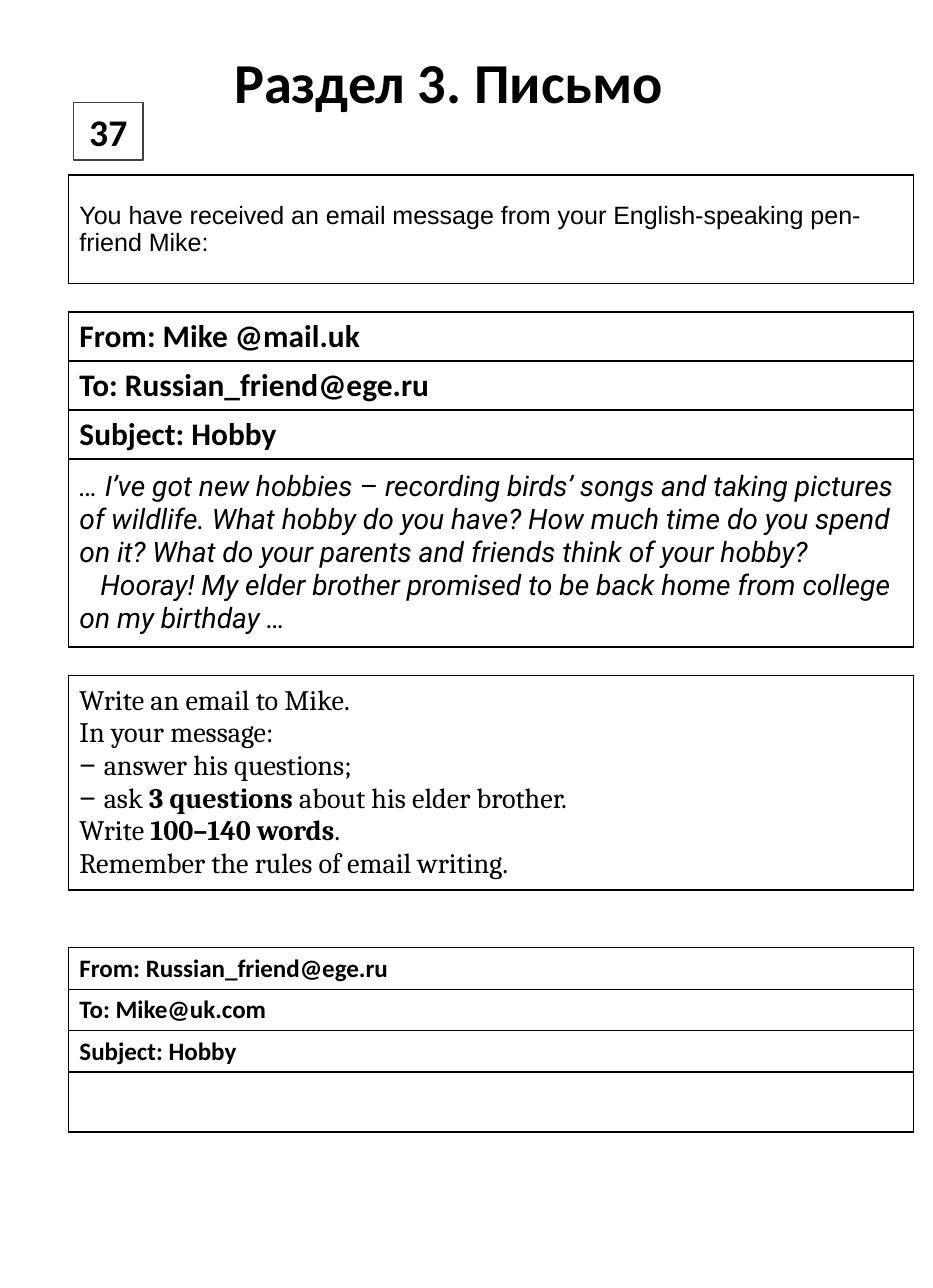
from pptx import Presentation
from pptx.dml.color import RGBColor
from pptx.enum.shapes import MSO_SHAPE
from pptx.enum.text import MSO_ANCHOR, PP_ALIGN
from pptx.oxml import parse_xml
from pptx.oxml.ns import nsdecls
from pptx.util import Pt

BLACK = RGBColor(0, 0, 0)
GRAY = RGBColor(0x40, 0x40, 0x40)
WHITE = RGBColor(255, 255, 255)
RECTANGLE = MSO_SHAPE.RECTANGLE
CENTER = PP_ALIGN.CENTER
TOP, MIDDLE = MSO_ANCHOR.TOP, MSO_ANCHOR.MIDDLE

TABLE_LEFT = 43.5
TABLE_WIDTH = 539.5
BOLD = {"bold": True}
UPRIGHT = {"italic": False}
ARIAL = {"name": "Arial"}

INTRO = [["You have received an email message from your English-speaking pen-friend Mike:"]]
RECEIVED = ["From: Mike @mail.uk", "To: Russian_friend@ege.ru", "Subject: Hobby"]
REPLY = ["From: Russian_friend@ege.ru", "To: Mike@uk.com", "Subject: Hobby"]
LETTER = [
    ["… I’ve got new hobbies ", ("–", UPRIGHT),
     " recording birds’ songs and taking pictures of wildlife. What hobby do you have? "
     "How much time do you spend on it? What do your parents and friends think of your hobby?"],
    ["Hooray! My elder brother promised to be back home from college on my birthday …"],
]
TASK = [
    ["Write an email to Mike."],
    ["In your message:"],
    [("− ", ARIAL), "answer his questions;"],
    [("− ", ARIAL), "ask ", ("3 questions ", BOLD), "about his elder brother."],
    ["Write ", ("100–140 words", BOLD), "."],
    ["Remember the rules of email writing."],
]


def style_font(font, **settings):
    """Set the given attributes of a font."""
    for name, value in settings.items():
        setattr(font, name, value)


def write_text(frame, lines, name, size, bold=False, italic=False, align=None):
    """Write lines of plain or styled spans into a text frame."""
    for index, line in enumerate(lines):
        para = frame.paragraphs[0] if index == 0 else frame.add_paragraph()
        para.alignment = align
        style_font(para.font, name=name, size=Pt(size), bold=bold, italic=italic)
        para.font.color.rgb = BLACK
        for part in line:
            text, settings = (part, {}) if isinstance(part, str) else part
            span = para.add_run()
            span.text = text
            style_font(span.font, **settings)


def add_title(page, text):
    """Add the section title."""
    box = page.shapes.add_textbox(Pt(141), Pt(26.6), Pt(291), Pt(51))
    box.text_frame.word_wrap = False
    write_text(box.text_frame, [[text]], "Calibri", 36, bold=True, align=CENTER)


def add_task_number(page, text):
    """Add the framed task number."""
    box = page.shapes.add_shape(RECTANGLE, Pt(46.8), Pt(65.5), Pt(44.6), Pt(36.7))
    box.shadow.inherit = False
    box.fill.solid()
    box.fill.fore_color.rgb = WHITE
    box.line.color.rgb = GRAY
    box.line.width = Pt(1)
    box.text_frame.vertical_anchor = MIDDLE
    write_text(box.text_frame, [[text]], "Calibri", 24, bold=True, align=CENTER)


def add_borders(cell):
    """Draw a thin black line on each side of a cell."""
    properties = cell._tc.get_or_add_tcPr()
    for side in "LRTB":
        properties.append(parse_xml(
            f'<a:ln{side} {nsdecls("a")} w="{Pt(1)}"><a:solidFill>'
            f'<a:srgbClr val="{BLACK}"/></a:solidFill></a:ln{side}>'))


def add_frame_table(page, top, heights):
    """Add a one-column bordered table and return its cells."""
    frame = page.shapes.add_table(
        len(heights), 1, Pt(TABLE_LEFT), Pt(top), Pt(TABLE_WIDTH), Pt(sum(heights)))
    table = frame.table
    table.first_row = table.horz_banding = False
    for row, height in zip(table.rows, heights):
        row.height = Pt(height)
    cells = list(table.iter_cells())
    for cell in cells:
        add_borders(cell)
        cell.fill.background()
    return cells


def add_text_table(page, top, height, lines, name, size):
    """Add a framed block of text."""
    cell, = add_frame_table(page, top, [height])
    cell.vertical_anchor = MIDDLE
    write_text(cell.text_frame, lines, name, size)


def add_email_table(page, top, header, size, row_height, body_height):
    """Add an email form and return its body cell."""
    *header_cells, body = add_frame_table(
        page, top, [row_height] * len(header) + [body_height])
    for cell, text in zip(header_cells, header):
        cell.vertical_anchor = TOP
        write_text(cell.text_frame, [[text]], "Calibri", size, bold=True)
    return body


def write_letter(cell):
    """Write the received letter with its last paragraph indented."""
    cell.vertical_anchor = MIDDLE
    cell.margin_top = cell.margin_bottom = Pt(5.8)
    write_text(cell.text_frame, LETTER, "Roboto", 18, italic=True)
    last = cell.text_frame.paragraphs[-1]
    last._p.get_or_add_pPr().set("indent", str(Pt(13.4)))


def main():
    """Build the writing task page."""
    deck = Presentation()
    deck.slide_width, deck.slide_height = Pt(595.44), Pt(822.24)
    page = deck.slides.add_slide(deck.slide_layouts[6])
    add_title(page, "Раздел 3. Письмо")
    add_task_number(page, "37")
    add_text_table(page, 111.8, 69.2, INTRO, "Arial", 16)
    write_letter(add_email_table(page, 199.2, RECEIVED, 20, 31.3, 120))
    add_text_table(page, 431.3, 136.8, TASK, "Cambria", 18)
    add_email_table(page, 605, REPLY, 16, 26.5, 38.2)
    deck.save("out.pptx")


if __name__ == "__main__":
    main()
